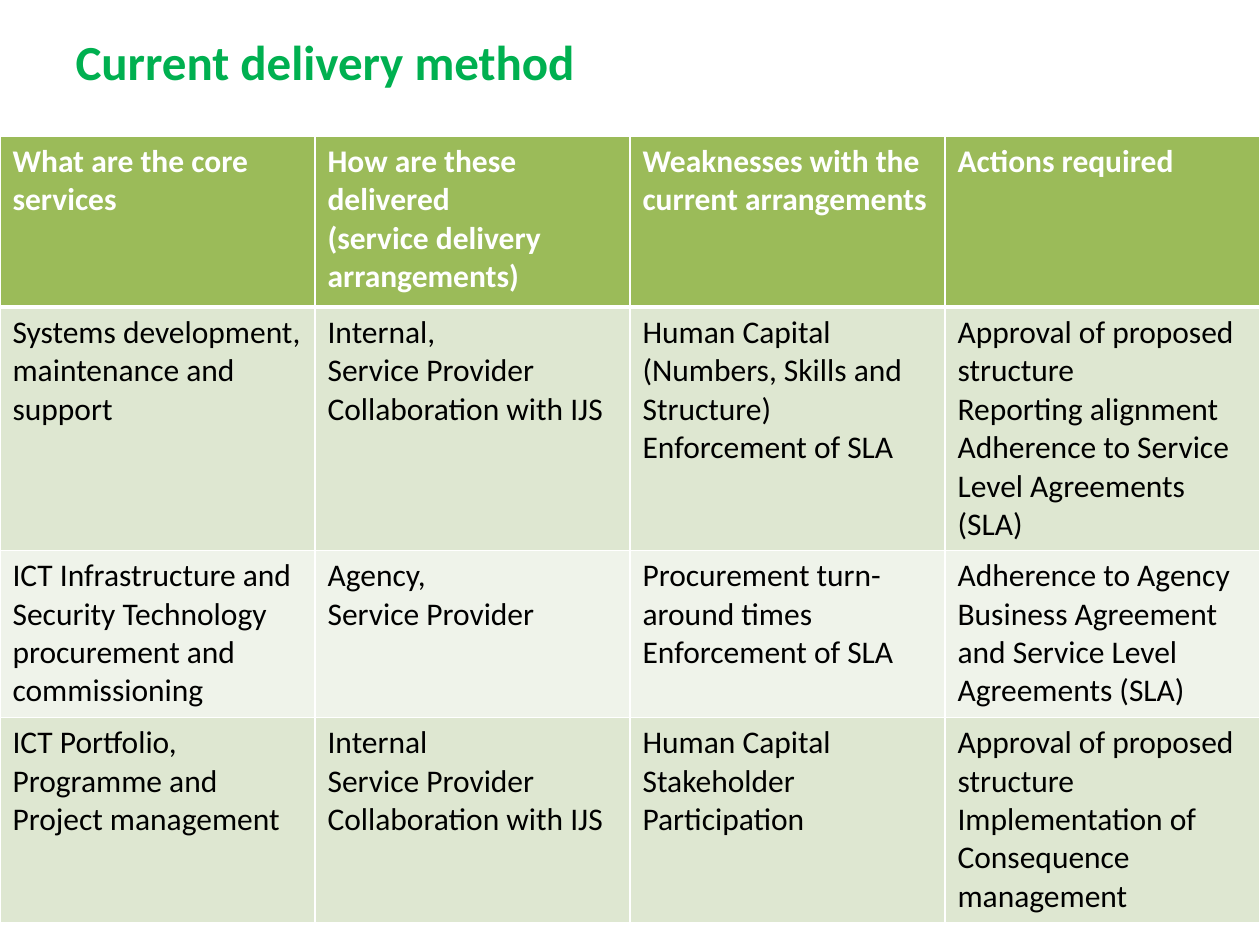
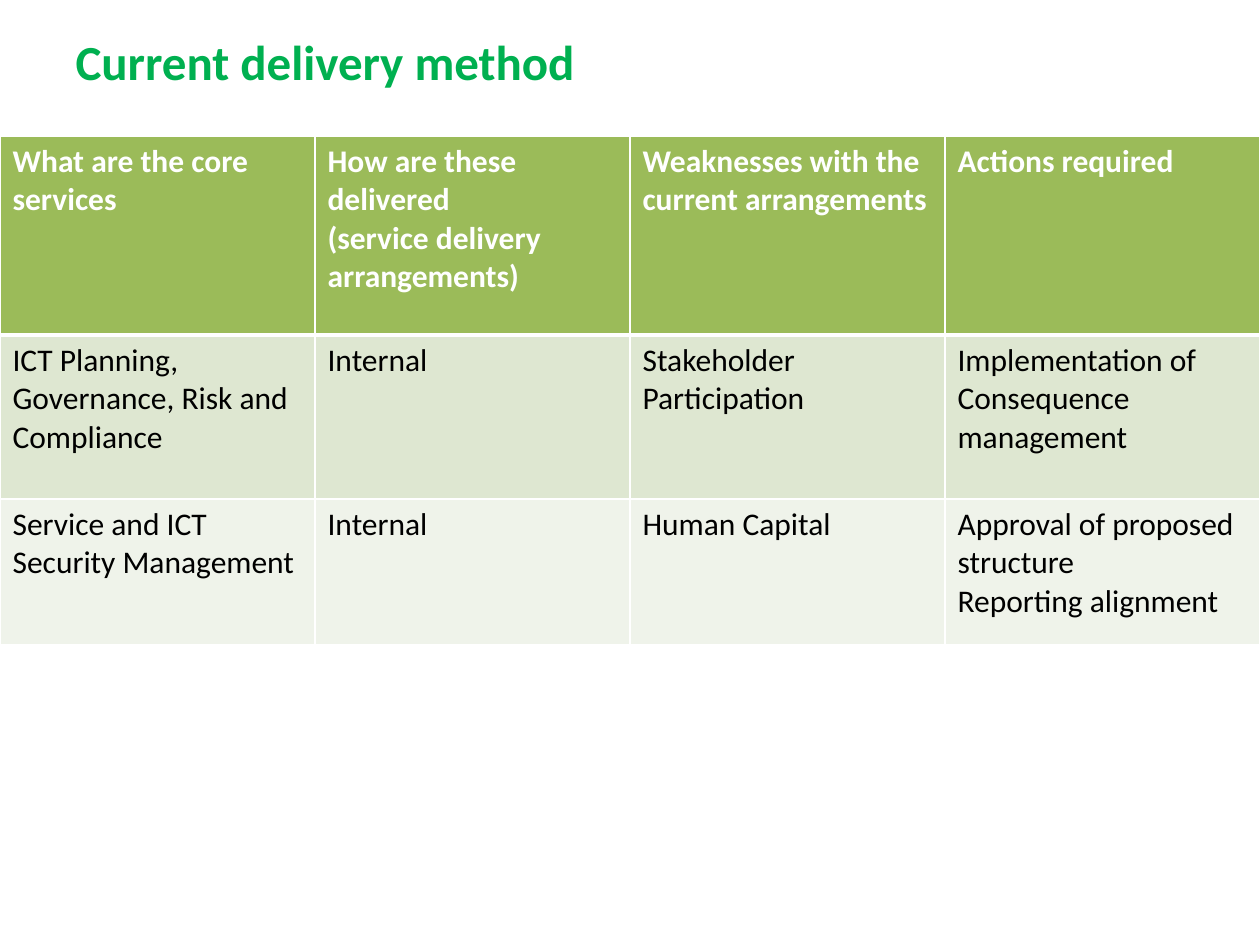
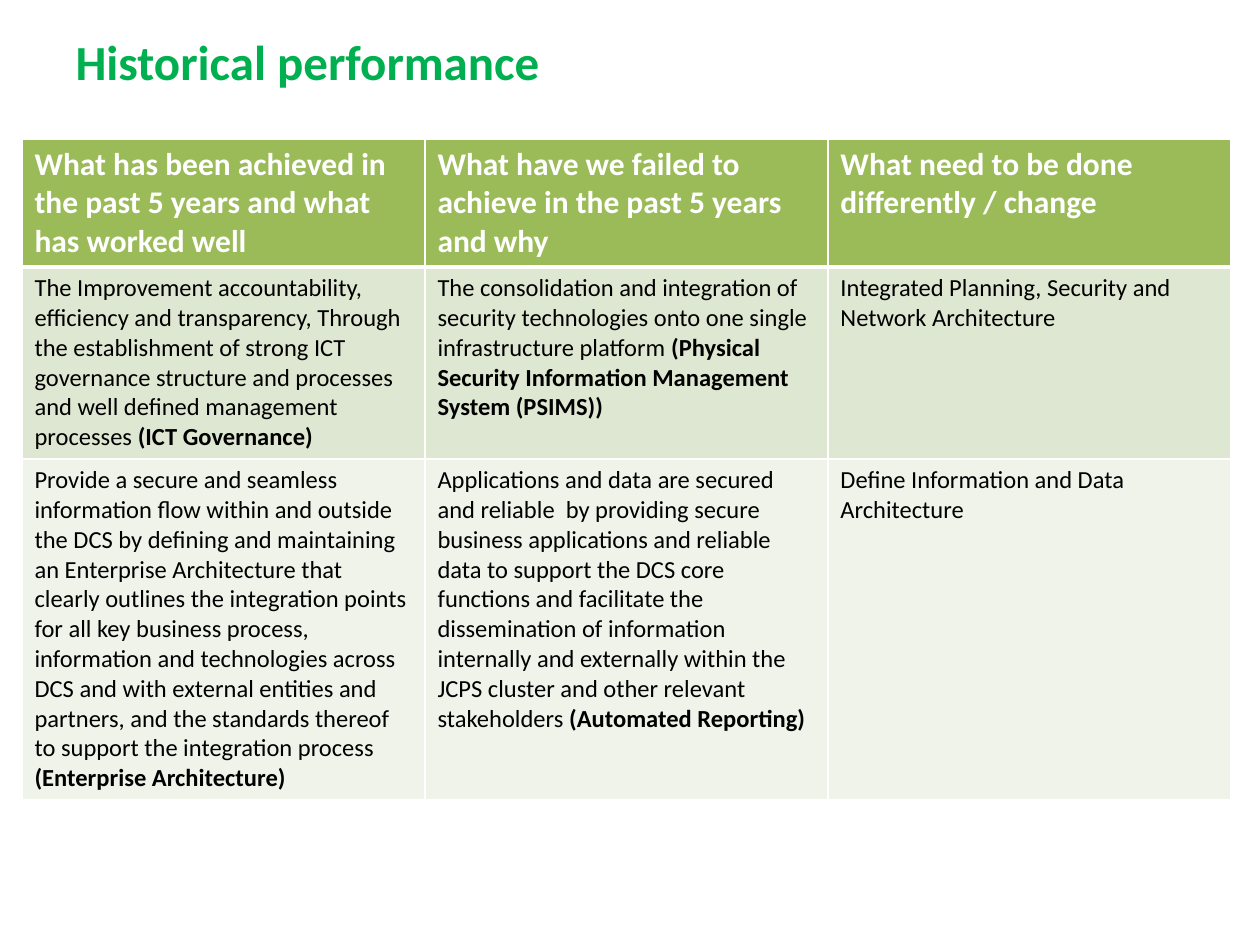
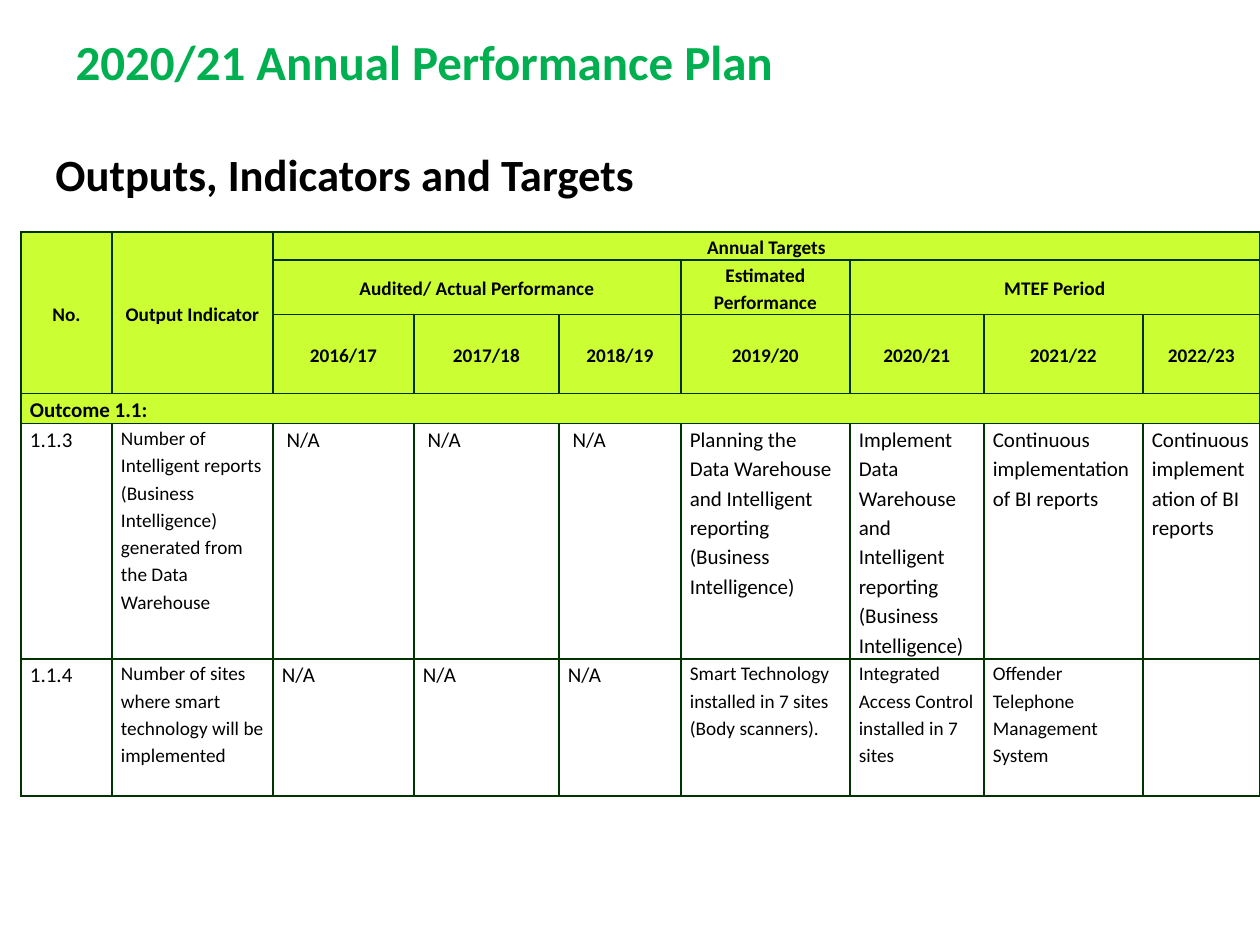
from pptx import Presentation
from pptx.dml.color import RGBColor
from pptx.enum.text import MSO_ANCHOR, MSO_AUTO_SIZE, PP_ALIGN
from pptx.oxml.ns import qn
from pptx.util import Emu, Pt
from lxml.etree import SubElement

FONT = "Calibri"
WHITE = RGBColor(0xFF, 0xFF, 0xFF)
BLACK = RGBColor(0x00, 0x00, 0x00)
TITLE_GREEN = RGBColor(0x00, 0xB0, 0x50)
HEADER_GREEN = RGBColor(0x9B, 0xBB, 0x59)
BANDS = [RGBColor(0xDE, 0xE7, 0xD1), RGBColor(0xEF, 0xF3, 0xEA)]
LIME = RGBColor(0xCC, 0xFF, 0x33)
DARK_GREEN = RGBColor(0x00, 0x33, 0x00)

# In cell text, "|" starts a new paragraph and "**" starts a bold ending.
DELIVERY_HEADER = [
    "What are the core services",
    "How are these delivered|(service delivery arrangements)",
    "Weaknesses with the current arrangements",
    "Actions required",
]
BANDED_SLIDES = [
    {
        "title": "Current delivery method",
        "left": 0, "top": 136, "column": 315, "heights": [171, 243, 167, 205], "body_size": 18,
        "rows": [
            DELIVERY_HEADER,
            ["Systems development, maintenance and support",
             "Internal,|Service Provider|Collaboration with IJS",
             "Human Capital (Numbers, Skills and Structure)|Enforcement of SLA",
             "Approval of proposed structure|Reporting alignment|"
             "Adherence to Service Level Agreements (SLA)"],
            ["ICT Infrastructure and Security Technology procurement and commissioning",
             "Agency,|Service Provider",
             "Procurement turn-around times|Enforcement of SLA",
             "Adherence to Agency Business Agreement and Service Level Agreements (SLA)"],
            ["ICT Portfolio, Programme and Project management",
             "Internal|Service Provider Collaboration with IJS",
             "Human Capital|Stakeholder Participation",
             "Approval of proposed structure|Implementation of Consequence management"],
        ],
    },
    {
        "title": "Current delivery method",
        "left": 0, "top": 136, "column": 315, "heights": [199, 164, 146], "body_size": 18,
        "rows": [
            DELIVERY_HEADER,
            ["ICT Planning, Governance, Risk and Compliance", "Internal",
             "Stakeholder Participation", "Implementation of Consequence management"],
            ["Service and ICT Security Management", "Internal", "Human Capital",
             "Approval of proposed structure|Reporting alignment"],
        ],
    },
    {
        "title": "Historical performance",
        "left": 22, "top": 139, "column": 403, "heights": [127, 192, 341], "body_size": 14,
        "rows": [
            ["What has been achieved in the past 5 years and what has worked well",
             "What have we failed to achieve in the past 5 years and why",
             "What need to be done differently / change"],
            ["The Improvement accountability, efficiency and transparency, Through the "
             "establishment of strong ICT governance structure and processes and well defined "
             "management processes **(ICT Governance)",
             "The consolidation and integration of security technologies onto one single "
             "infrastructure platform **(Physical Security Information Management System (PSIMS))",
             "Integrated Planning, Security and Network Architecture"],
            ["Provide a secure and seamless information flow within and outside the DCS by "
             "defining and maintaining an Enterprise Architecture that clearly outlines the "
             "integration points for all key business process, information and technologies "
             "across DCS and with external entities and partners, and the standards thereof to "
             "support the integration process **(Enterprise Architecture)",
             "Applications and data are secured and reliable  by providing secure business "
             "applications and reliable data to support the DCS core functions and facilitate "
             "the dissemination of information internally and externally within the JCPS cluster "
             "and other relevant stakeholders **(Automated Reporting)",
             "Define Information and Data Architecture"],
        ],
    },
]

PLAN_TITLE = "2020/21 Annual Performance Plan"
PLAN_SUBTITLE = "Outputs, Indicators and Targets"
PLAN_WIDTHS = [91, 161, 141, 145, 122, 169, 134, 159, 117]
PLAN_HEIGHTS = [28, 54, 79, 30, 235, 137]
PLAN_ROWS = [
    ["No.", "Output Indicator", "Annual Targets", "", "", "", "", "", ""],
    ["", "", "Audited/ Actual Performance", "", "", "Estimated Performance", "MTEF Period", "", ""],
    ["", "", "2016/17", "2017/18", "2018/19", "2019/20", "2020/21", "2021/22", "2022/23"],
    ["Outcome 1.1:", "", "", "", "", "", "", "", ""],
    ["1.1.3",
     "Number of Intelligent reports (Business Intelligence)|generated from the Data Warehouse",
     " N/A", " N/A", " N/A",
     "Planning the Data Warehouse and Intelligent reporting (Business Intelligence)",
     "Implement Data Warehouse and Intelligent reporting (Business Intelligence)",
     "Continuous implementation of BI reports", "Continuous implementation of BI reports"],
    ["1.1.4", "Number of sites where smart technology will be implemented",
     "N/A", "N/A", "N/A",
     "Smart Technology installed in 7 sites (Body scanners).",
     "Integrated Access Control installed in 7 sites",
     "Offender Telephone Management System", ""],
]
PLAN_MERGES = [  # first row, first column, last row, last column
    (0, 0, 2, 0), (0, 1, 2, 1), (0, 2, 0, 8), (1, 2, 1, 4), (1, 6, 1, 8), (3, 0, 3, 8),
]
HEADING_ROWS = 3
OUTCOME_ROW = 3
SMALL_CELLS = {(4, 1), (5, 1), (5, 5), (5, 6), (5, 7)}


def px(length):
    return Emu(round(length * 914400 / 126))


def style(font, size, color, bold):
    font.name = FONT
    font.size = Pt(size)
    font.color.rgb = color
    font.bold = bold


def write(frame, text, size, color, bold, align=PP_ALIGN.LEFT, spacing=None):
    for number, line in enumerate(text.split("|")):
        para = frame.add_paragraph() if number else frame.paragraphs[0]
        para.alignment = align
        para.line_spacing = spacing
        style(para.font, size, color, bold)
        plain, _, ending = line.partition("**")
        if plain:
            para.add_run().text = plain
        if ending:
            span = para.add_run()
            span.text = ending
            span.font.bold = True


def set_borders(cell, color, top=1, bottom=1):
    properties = cell._tc.get_or_add_tcPr()
    for side, points in (("L", 1), ("R", 1), ("T", top), ("B", bottom)):
        line = SubElement(properties, qn(f"a:ln{side}"), w=str(Pt(points)))
        fill = SubElement(line, qn("a:solidFill"))
        SubElement(fill, qn("a:srgbClr"), val=str(color))


def set_fill(cell, color):
    cell.fill.solid()
    cell.fill.fore_color.rgb = color


def add_titled_slide(deck, title):
    slide = deck.slides.add_slide(deck.slide_layouts[5])
    box = slide.shapes.title
    box.left, box.top, box.width, box.height = px(63), px(25), px(1134), px(72)
    frame = box.text_frame
    frame.auto_size = MSO_AUTO_SIZE.NONE
    frame.vertical_anchor = MSO_ANCHOR.TOP
    write(frame, title, 28, TITLE_GREEN, True)
    return slide


def add_grid(slide, left, top, widths, heights):
    table = slide.shapes.add_table(len(heights), len(widths), px(left), px(top),
                                   px(sum(widths)), px(sum(heights))).table
    table.first_row = table.horz_banding = False
    for column, width in zip(table.columns, widths):
        column.width = px(width)
    for row, height in zip(table.rows, heights):
        row.height = px(height)
    return table


def add_banded_slide(deck, content):
    slide = add_titled_slide(deck, content["title"])
    rows = content["rows"]
    table = add_grid(slide, content["left"], content["top"],
                     [content["column"]] * len(rows[0]), content["heights"])
    for r, row in enumerate(rows):
        for c, text in enumerate(row):
            cell = table.cell(r, c)
            set_borders(cell, WHITE, top=3 if r == 1 else 1, bottom=3 if r == 0 else 1)
            if r == 0:
                set_fill(cell, HEADER_GREEN)
                write(cell.text_frame, text, 18, WHITE, True)
            else:
                set_fill(cell, BANDS[(r - 1) % 2])
                write(cell.text_frame, text, content["body_size"], BLACK, False)


def add_plan_slide(deck):
    slide = add_titled_slide(deck, PLAN_TITLE)
    table = add_grid(slide, 21, 232, PLAN_WIDTHS, PLAN_HEIGHTS)
    for r, row in enumerate(PLAN_ROWS):
        heading = r < HEADING_ROWS
        for c, text in enumerate(row):
            cell = table.cell(r, c)
            set_borders(cell, DARK_GREEN)
            cell.margin_left = cell.margin_right = px(9)
            cell.margin_top = cell.margin_bottom = 0
            if r <= OUTCOME_ROW:
                set_fill(cell, LIME)
            else:
                cell.fill.background()
            if heading:
                cell.vertical_anchor = MSO_ANCHOR.MIDDLE
            size = 11 if heading or (r, c) in SMALL_CELLS else 12
            write(cell.text_frame, text, size, BLACK, r <= OUTCOME_ROW,
                  PP_ALIGN.CENTER if heading else PP_ALIGN.LEFT, 1.15)
    for top, left, bottom, right in PLAN_MERGES:
        table.cell(top, left).merge(table.cell(bottom, right))

    box = slide.shapes.add_textbox(px(43), px(141), px(616), px(121))
    box.text_frame.word_wrap = False
    write(box.text_frame, PLAN_SUBTITLE, 25.5, BLACK, True)


def main():
    deck = Presentation()
    deck.slide_width, deck.slide_height = px(1260), px(945)
    for content in BANDED_SLIDES:
        add_banded_slide(deck, content)
    add_plan_slide(deck)
    deck.save("out.pptx")


if __name__ == "__main__":
    main()
